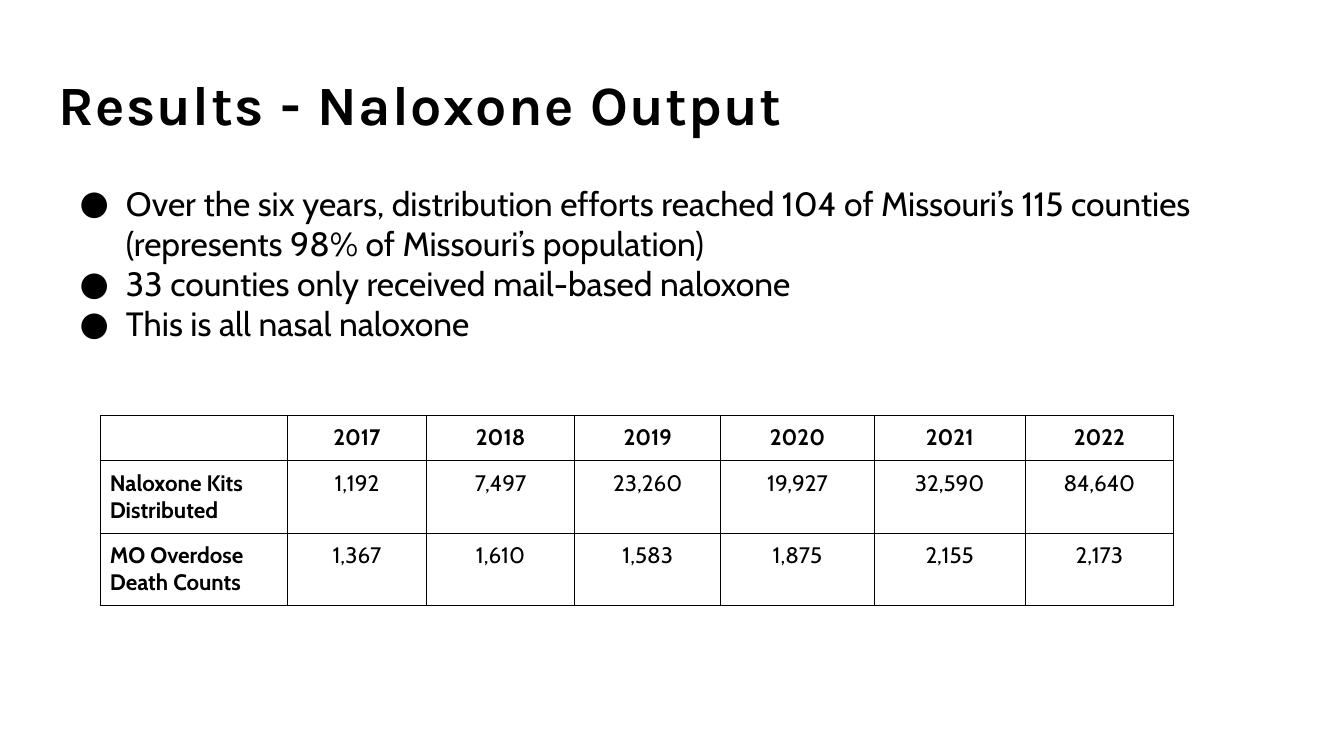
from lxml.etree import SubElement
from pptx import Presentation
from pptx.dml.color import RGBColor
from pptx.enum.text import MSO_ANCHOR as Anchor, MSO_AUTO_SIZE as AutoSize, PP_ALIGN as Align
from pptx.oxml import parse_xml
from pptx.oxml.ns import nsdecls, qn
from pptx.util import Inches, Pt

INK = "000000"
PAPER = "FFFFFF"
LEFT = 0.45
BULLETS = [
    "Over the six years, distribution efforts reached 104 of Missouri’s 115 counties "
    "(represents 98% of Missouri’s population)",
    "33 counties only received mail-based naloxone",
    "This is all nasal naloxone",
]
COLUMN_WIDTHS = [1.85, 1.38, 1.47, 1.45, 1.52, 1.5, 1.47]
ROW_HEIGHTS = [0.45, 0.72, 0.72]
ROWS = [
    ["", "2017", "2018", "2019", "2020", "2021", "2022"],
    ["Naloxone Kits Distributed", "1,192", "7,497", "23,260", "19,927", "32,590", "84,640"],
    ["MO Overdose Death Counts", "1,367", "1,610", "1,583", "1,875", "2,155", "2,173"],
]


def color(value):
    """Turn a hex string into a colour."""
    return RGBColor.from_string(value)


def add_run(paragraph, text, size, font="Cabin", bold=False):
    """Add one formatted run and return it."""
    run = paragraph.add_run()
    run.text = text
    run.font.size = Pt(size)
    run.font.name = font
    run.font.bold = bold
    run.font.color.rgb = color(INK)
    return run


def set_frame(frame, anchor):
    """Give a text frame its wrapping, anchor and insets."""
    frame.word_wrap = True
    frame.auto_size = AutoSize.NONE
    frame.vertical_anchor = anchor
    frame.margin_left = frame.margin_right = Inches(0.13)
    frame.margin_top = frame.margin_bottom = Inches(0.13)


def fill_title(slide, text):
    """Place and format the title placeholder."""
    title = slide.shapes.title
    title.left, title.top = Inches(LEFT), Inches(0.65)
    title.width, title.height = Inches(12.42), Inches(0.84)
    set_frame(title.text_frame, Anchor.MIDDLE)
    paragraph = title.text_frame.paragraphs[0]
    paragraph.alignment = Align.LEFT
    paragraph.line_spacing = 0.9
    run = add_run(paragraph, text, 39.6, "Karla", True)
    run.font._element.set("spc", "100")


def add_bullet(paragraph):
    """Give a paragraph a round bullet with a hanging indent."""
    properties = paragraph._p.get_or_add_pPr()
    properties.set("marL", str(Inches(0.67)))
    properties.set("indent", str(Inches(-0.46)))
    bullet_color = SubElement(properties, qn("a:buClr"))
    SubElement(bullet_color, qn("a:srgbClr"), val=INK)
    SubElement(properties, qn("a:buFont"), typeface="Cabin")
    SubElement(properties, qn("a:buChar"), char="●")


def add_bullets(slide, texts):
    """Add the bulleted findings."""
    box = slide.shapes.add_textbox(Inches(LEFT), Inches(1.68), Inches(11.73), Inches(2.44))
    frame = box.text_frame
    set_frame(frame, Anchor.TOP)
    for index, text in enumerate(texts):
        paragraph = frame.add_paragraph() if index else frame.paragraphs[0]
        add_bullet(paragraph)
        add_run(paragraph, text, 24)


def add_borders(cell):
    """Draw a thin line on all four sides of a cell."""
    properties = cell._tc.get_or_add_tcPr()
    for index, side in enumerate("LRTB"):
        properties.insert(index, parse_xml(
            f'<a:ln{side} {nsdecls("a")} w="9525"><a:solidFill>'
            f'<a:srgbClr val="{INK}"/></a:solidFill></a:ln{side}>'))


def fill_cell(cell, text, is_label, is_header):
    """Write and format one table cell."""
    cell.fill.background()
    add_borders(cell)
    cell.margin_left = cell.margin_right = Inches(0.09)
    cell.margin_top = cell.margin_bottom = Inches(0.09)
    paragraph = cell.text_frame.paragraphs[0]
    paragraph.alignment = Align.LEFT if is_label else Align.CENTER
    if text:
        add_run(paragraph, text, 16, bold=is_label or is_header)
    else:
        SubElement(paragraph._p, qn("a:endParaRPr"), sz="1600")


def add_count_table(slide, rows):
    """Add the table of yearly counts."""
    table = slide.shapes.add_table(
        len(rows), len(COLUMN_WIDTHS), Inches(1), Inches(4.12),
        Inches(sum(COLUMN_WIDTHS)), Inches(sum(ROW_HEIGHTS))).table
    table.first_row = table.horz_banding = False
    for column, width in zip(table.columns, COLUMN_WIDTHS):
        column.width = Inches(width)
    for row, height in zip(table.rows, ROW_HEIGHTS):
        row.height = Inches(height)
    for row_index, texts in enumerate(rows):
        for column_index, text in enumerate(texts):
            fill_cell(table.cell(row_index, column_index), text,
                      column_index == 0, row_index == 0)


def main():
    """Build the slide and save it."""
    presentation = Presentation()
    presentation.slide_width, presentation.slide_height = Inches(13.33), Inches(7.5)
    slide = presentation.slides.add_slide(presentation.slide_layouts[5])
    slide.background.fill.solid()
    slide.background.fill.fore_color.rgb = color(PAPER)
    fill_title(slide, "Results - Naloxone Output")
    add_bullets(slide, BULLETS)
    add_count_table(slide, ROWS)
    presentation.save("out.pptx")


if __name__ == "__main__":
    main()
